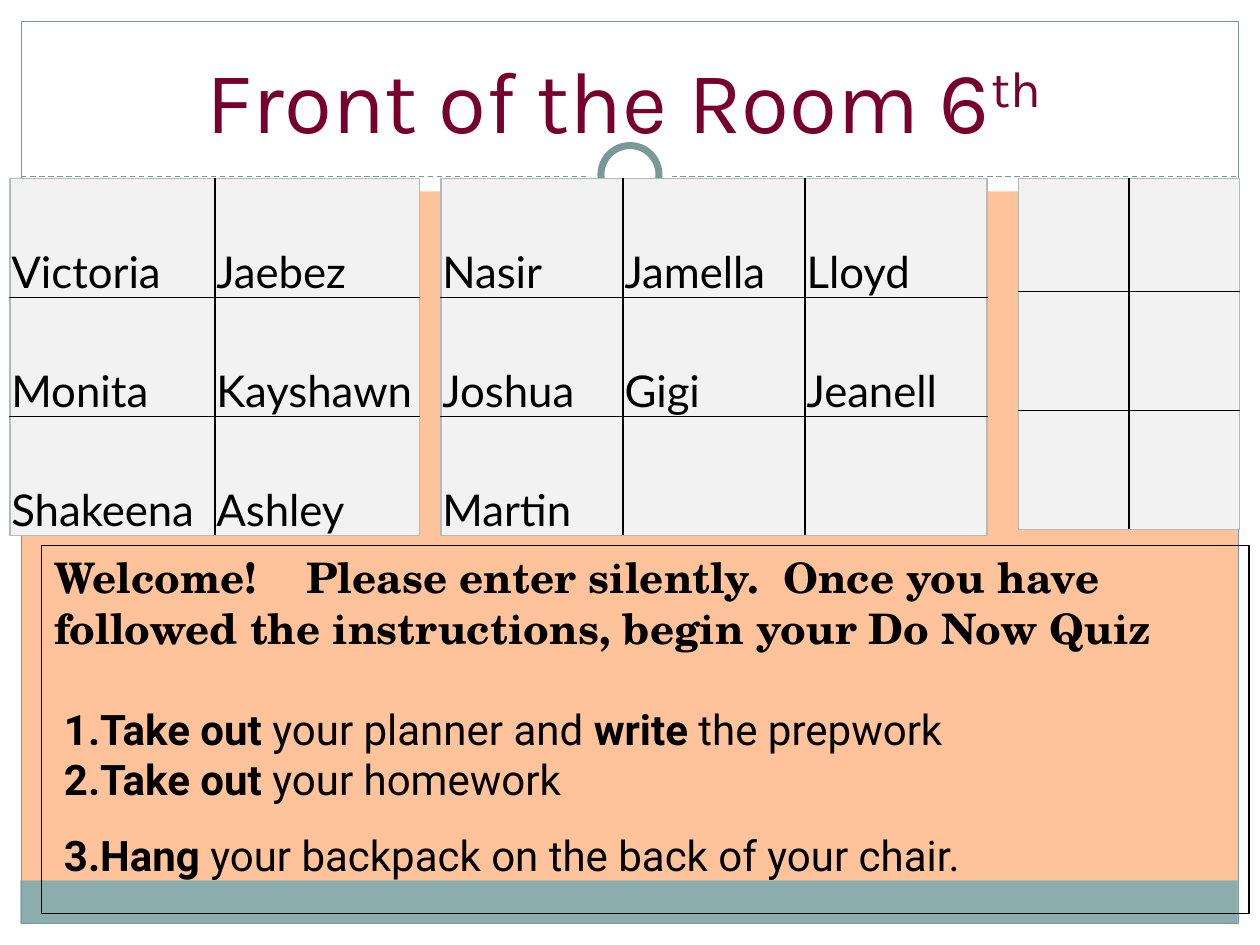
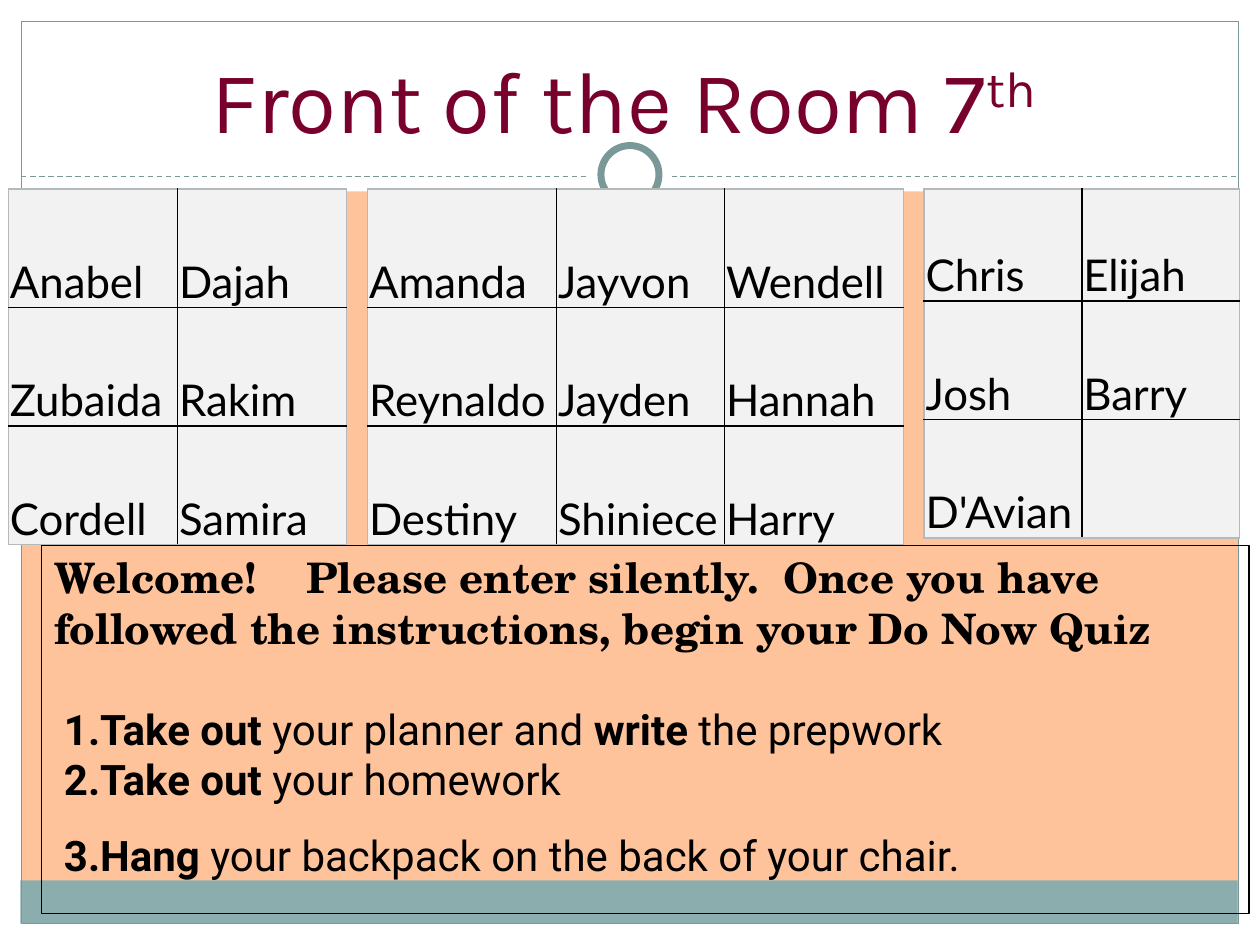
from lxml import etree
from pptx import Presentation
from pptx.dml.color import RGBColor
from pptx.enum.dml import MSO_LINE_DASH_STYLE as Dash
from pptx.enum.shapes import MSO_CONNECTOR as Connector, MSO_SHAPE as Shape
from pptx.enum.text import MSO_ANCHOR as Anchor, PP_ALIGN as Align
from pptx.oxml import parse_xml
from pptx.oxml.ns import nsdecls, qn
from pptx.util import Cm, Pt

COLORS = {
    "background": "FFC39B",
    "paper": "FFFFFF",
    "frame": "7B9899",
    "band": "8CADAE",
    "title": "78002D",
    "seat": "F2F2F2",
    "edge": "B4B9BA",
    "ink": "000000",
}
WIDTH, HEIGHT, MARGIN = 25.4, 19.05, 0.43
TITLE_FONT, SEAT_FONT, WELCOME_FONT, STEP_FONT = "Karla", "Lato", "TeX Gyre Schola", "Roboto"

WELCOME = ("Welcome!\tPlease enter silently.  Once you have followed the instructions, "
           "begin your Do Now Quiz")
STEPS = [
    [("Take out ", True), ("your planner and ", False), ("write", True), (" the prepwork", False)],
    [("Take out ", True), ("your homework", False)],
    [("Hang", True), (" your backpack on the back of your chair.", False)],
]

CLASSES = [
    {
        "grade": "6",
        "top": 3.6,
        "groups": [
            (8.89, [3.67] * 3, [2.4] * 3,
             [["Nasir", "Jamella", "Lloyd"], ["Joshua", "Gigi", "Jeanell"], ["Martin", "", ""]]),
            (20.53, [2.23] * 2, [2.28, 2.4, 2.4], [["", ""]] * 3),
            (0.2, [4.13] * 2, [2.4] * 3,
             [["Victoria", "Jaebez"], ["Monita", "Kayshawn"], ["Shakeena", "Ashley"]]),
        ],
    },
    {
        "grade": "7",
        "top": 3.81,
        "groups": [
            (7.41, [3.81, 3.39, 3.6], [2.39] * 3,
             [["Amanda", "Jayvon", "Wendell"], ["Reynaldo", "Jayden", "Hannah"],
              ["Destiny", "Shiniece", "Harry"]]),
            (18.63, [3.18] * 2, [2.26, 2.39, 2.39],
             [["Chris", "Elijah"], ["Josh", "Barry"], ["D'Avian", ""]]),
            (0.17, [3.41] * 2, [2.39] * 3,
             [["Anabel", "Dajah"], ["Zubaida", "Rakim"], ["Cordell", "Samira"]]),
        ],
    },
]


def color(name):
    return RGBColor.from_string(COLORS[name])


class SeatingDeck:
    def __init__(self):
        self.deck = Presentation()
        self.deck.slide_width, self.deck.slide_height = Cm(WIDTH), Cm(HEIGHT)
        self.slide = None

    def start_slide(self):
        self.slide = self.deck.slides.add_slide(self.deck.slide_layouts[6])
        background = self.slide.background.fill
        background.solid()
        background.fore_color.rgb = color("background")

    def shape(self, kind, box, fill=None, line=None, weight=0.75):
        shape = self.slide.shapes.add_shape(kind, *map(Cm, box))
        shape.shadow.inherit = False
        if fill:
            shape.fill.solid()
            shape.fill.fore_color.rgb = color(fill)
        else:
            shape.fill.background()
        if line:
            shape.line.color.rgb = color(line)
            shape.line.width = Pt(weight)
        else:
            shape.line.fill.background()
        return shape

    def divider(self, y):
        line = self.slide.shapes.add_connector(
            Connector.STRAIGHT, Cm(MARGIN), Cm(y), Cm(WIDTH - MARGIN), Cm(y))
        line.line.color.rgb = color("frame")
        line.line.width = Pt(0.75)
        line.line.dash_style = Dash.DASH
        etree.SubElement(line._element.spPr, qn("a:effectLst"))

    def ring(self, diameter, **style):
        left, top = (WIDTH - diameter) / 2, 3.52 - diameter / 2
        self.shape(Shape.OVAL, (left, top, diameter, diameter), "paper", **style)

    def frame(self):
        self.shape(Shape.RECTANGLE, (0, 0, WIDTH, 3.86), "paper")
        self.divider(3.56)
        self.ring(1.7)
        self.ring(1.17, line="frame", weight=4)
        for border in [
            (0, HEIGHT - MARGIN, WIDTH, MARGIN),
            (0, 0, WIDTH, MARGIN),
            (WIDTH - MARGIN, 0, MARGIN, HEIGHT),
            (0, 0, MARGIN, HEIGHT),
        ]:
            self.shape(Shape.RECTANGLE, border, "paper")
        inner_width = WIDTH - 2 * MARGIN
        self.shape(Shape.RECTANGLE, (0.41, 17.75, inner_width, 0.87), "band")
        self.shape(Shape.RECTANGLE, (MARGIN, MARGIN, inner_width, HEIGHT - 2 * MARGIN),
                   line="frame")

    def title(self, grade):
        heading = self.slide.shapes.add_textbox(*map(Cm, (1.27, 0.79, 22.86, 2.39))).text_frame
        heading.word_wrap = True
        heading.vertical_anchor = Anchor.BOTTOM
        paragraph = heading.paragraphs[0]
        paragraph.alignment = Align.CENTER
        self.font(paragraph, TITLE_FONT, 50, "title")
        paragraph.add_run().text = f"Front of the Room {grade}"
        ordinal = paragraph.add_run()
        ordinal.text = "th "
        ordinal.font._element.set("baseline", "30000")

    def font(self, paragraph, name, size, ink="ink", bold=None):
        font = paragraph.font
        font.name, font.size, font.bold = name, Pt(size), bold
        font.color.rgb = color(ink)

    def seats(self, left, top, columns, rows, names):
        box = map(Cm, (left, top, sum(columns), sum(rows)))
        table = self.slide.shapes.add_table(len(rows), len(columns), *box).table
        table.first_row = table.horz_banding = False
        for column, width in zip(table.columns, columns):
            column.width = Cm(width)
        for row, height in zip(table.rows, rows):
            row.height = Cm(height)
        last_row, last_column = len(rows) - 1, len(columns) - 1
        for r, row_names in enumerate(names):
            for c, name in enumerate(row_names):
                outer = {"L": c == 0, "R": c == last_column, "T": r == 0, "B": r == last_row}
                self.seat(table.cell(r, c), name, outer)

    def seat(self, cell, name, outer):
        cell.fill.solid()
        cell.fill.fore_color.rgb = color("seat")
        cell.vertical_anchor = Anchor.BOTTOM
        cell.margin_left = cell.margin_right = cell.margin_top = Cm(0.03)
        cell.margin_bottom = 0
        cell.text = name
        self.font(cell.text_frame.paragraphs[0], SEAT_FONT, 25)
        properties = cell._tc.get_or_add_tcPr()
        for position, (side, is_outer) in enumerate(outer.items()):
            ink = COLORS["edge" if is_outer else "ink"]
            properties.insert(position, parse_xml(
                f'<a:ln{side} {nsdecls("a")} w="12700"><a:solidFill>'
                f'<a:srgbClr val="{ink}"/></a:solidFill></a:ln{side}>'))

    def instructions(self):
        panel = self.shape(Shape.RECTANGLE, (0.84, 11, 24.34, 7.41), line="ink").text_frame
        panel.word_wrap = True
        panel.vertical_anchor = Anchor.TOP
        welcome = panel.paragraphs[0]
        welcome.alignment = Align.LEFT
        self.font(welcome, WELCOME_FONT, 24, bold=True)
        welcome.add_run().text = WELCOME
        for number, parts in enumerate(STEPS):
            step = panel.add_paragraph()
            step.alignment = Align.LEFT
            self.font(step, STEP_FONT, 24)
            if number == 0:
                step.space_before = Pt(29)
            if number == len(STEPS) - 1:
                step.line_spacing = 1.5
            for words, bold in parts:
                run = step.add_run()
                run.text, run.font.bold = words, bold
            self.numbering(step)

    def numbering(self, step):
        properties = step._p.get_or_add_pPr()
        properties.set("marL", str(Cm(0.71)))
        properties.set("indent", str(Cm(-0.51)))
        bullet = parse_xml(f'<a:buAutoNum {nsdecls("a")} type="arabicPeriod"/>')
        properties.find(qn("a:defRPr")).addprevious(bullet)


def main():
    seating = SeatingDeck()
    for school_class in CLASSES:
        seating.start_slide()
        seating.frame()
        seating.title(school_class["grade"])
        for left, columns, rows, names in school_class["groups"]:
            seating.seats(left, school_class["top"], columns, rows, names)
        seating.instructions()
    seating.deck.save("out.pptx")


if __name__ == "__main__":
    main()
